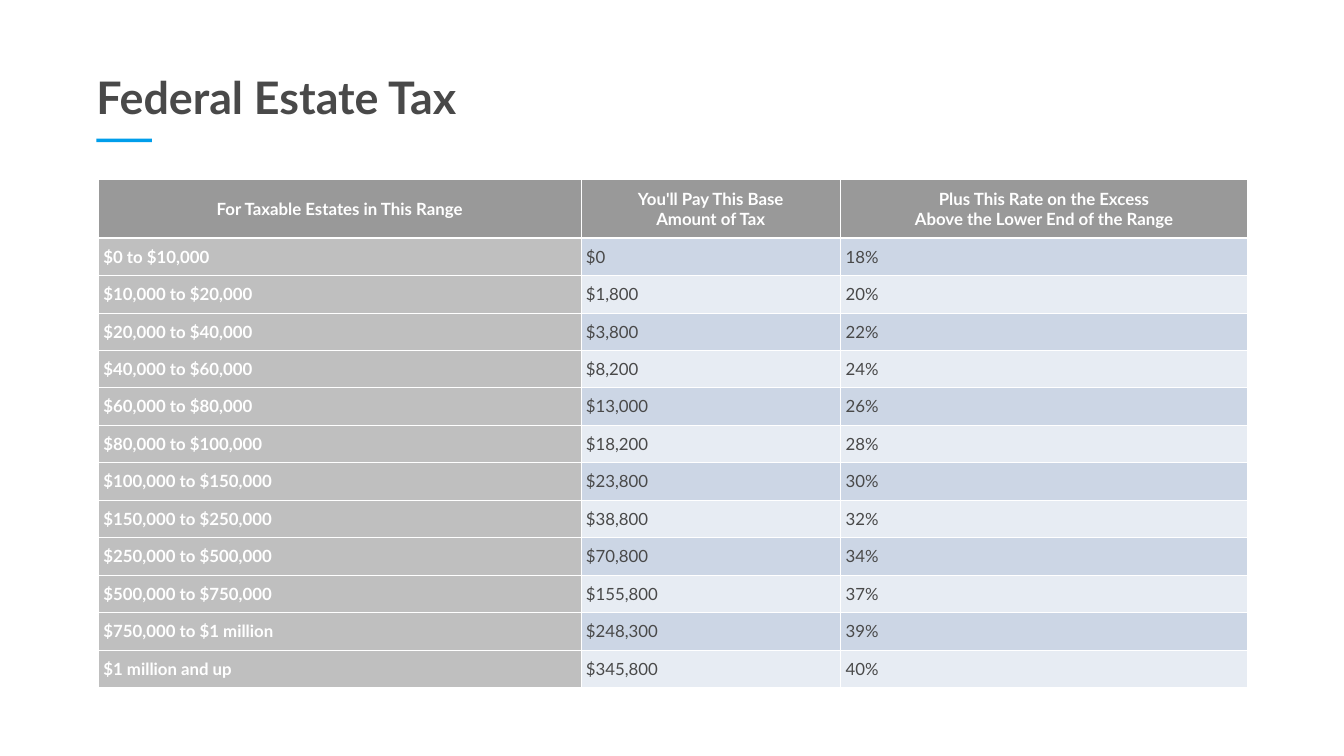
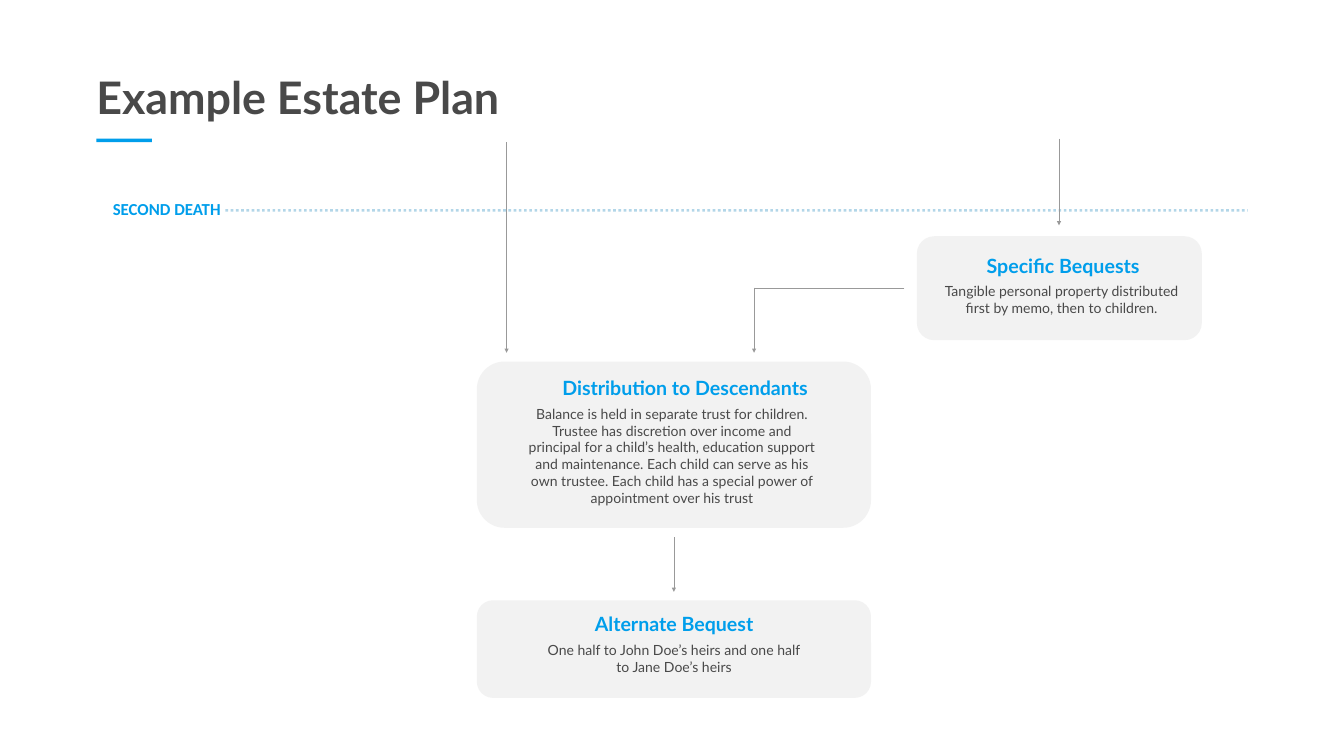
from typing import NamedTuple, Optional

from lxml.etree import SubElement
from pptx import Presentation
from pptx.dml.color import RGBColor
from pptx.enum.dml import MSO_LINE_DASH_STYLE as Dash
from pptx.enum.shapes import MSO_CONNECTOR as Link, MSO_SHAPE as Form
from pptx.enum.text import MSO_ANCHOR as Anchor, MSO_AUTO_SIZE as Fit, PP_ALIGN as Align
from pptx.oxml.ns import qn
from pptx.util import Pt

# Colours and fonts
INK = RGBColor(0x49, 0x49, 0x49)
BLUE = RGBColor(0x00, 0x9E, 0xEB)
NAVY = RGBColor(0x01, 0x78, 0xB6)
WHITE = RGBColor(0xFF, 0xFF, 0xFF)
GREY = RGBColor(0x99, 0x99, 0x99)
SILVER = RGBColor(0xBF, 0xBF, 0xBF)
PALE = RGBColor(0xF2, 0xF2, 0xF2)
BANDS = (RGBColor(0xCC, 0xD6, 0xE5), RGBColor(0xE7, 0xEC, 0xF3))
LATO = "Lato"


class Box(NamedTuple):
    left: float
    top: float
    width: float
    height: float

    def pts(self) -> list:
        return [Pt(n) for n in self]


class Style(NamedTuple):
    size: float
    color: RGBColor
    bold: bool = False
    font: str = LATO


class Card(NamedTuple):
    panel: Box
    head: str
    head_box: Box
    body: str
    body_box: Box


class Line(NamedTuple):
    x1: float
    y1: float
    x2: float
    y2: float
    color: RGBColor = GREY
    width: float = 0.5
    arrow: bool = True
    dash: Optional[Dash] = None
    alpha: int = 100


TITLE = Style(64, INK, True)
LABEL = Style(24, BLUE, True, "Calibri")
HEAD = Style(28, BLUE, True)
BODY = Style(20, INK)
STRONG = Style(24, WHITE, True)
PLAIN = Style(24, INK)

# Tax table
HEADS = (
    "For Taxable Estates in This Range",
    "You'll Pay This Base\nAmount of Tax",
    "Plus This Rate on the Excess\nAbove the Lower End of the Range",
)
RATES = (
    ("$0 to $10,000", "$0", "18%"),
    ("$10,000 to $20,000", "$1,800", "20%"),
    ("$20,000 to $40,000", "$3,800", "22%"),
    ("$40,000 to $60,000", "$8,200", "24%"),
    ("$60,000 to $80,000", "$13,000", "26%"),
    ("$80,000 to $100,000", "$18,200", "28%"),
    ("$100,000 to $150,000", "$23,800", "30%"),
    ("$150,000 to $250,000", "$38,800", "32%"),
    ("$250,000 to $500,000", "$70,800", "34%"),
    ("$500,000 to $750,000", "$155,800", "37%"),
    ("$750,000 to $1 million", "$248,300", "39%"),
    ("$1 million and up", "$345,800", "40%"),
)
COLS = (689, 371, 581)
HEAD_ROW, ROW = 83.5, 53.5

# Estate plan
CARDS = (
    Card(Box(1309.5, 337.5, 407, 148.5),
         "Specific Bequests", Box(1356, 359, 324.5, 41),
         "Tangible personal property distributed first by memo, then to children.",
         Box(1327, 400.5, 378.5, 55.5)),
    Card(Box(681, 516.5, 563, 237.5),
         "Distribution to Descendants", Box(777, 533.5, 402.5, 41),
         "Balance is held in separate trust for children. Trustee has discretion over "
         "income and principal for a child’s health, education support and maintenance. "
         "Each child can serve as his own trustee. Each child has a special power of "
         "appointment over his trust",
         Box(743, 575.5, 433.5, 152.5)),
    Card(Box(681, 857.5, 563, 139.5),
         "Alternate Bequest", Box(777, 871, 371.5, 41),
         "One half to John Doe’s heirs and one half\nto Jane Doe’s heirs",
         Box(746, 913, 433.5, 55.5)),
)
LINES = (
    Line(322, 300.5, 1782, 300.5, NAVY, 3.75, False, Dash.ROUND_DOT, 30),
    Line(1512.5, 198, 1512.5, 322),
    Line(723.5, 203, 723.5, 504),
    Line(1291.5, 411, 1077, 411, arrow=False),
    Line(1077, 411, 1077, 504),
    Line(962.5, 767.5, 962.5, 845.5),
)


def write(para, text: str, style: Style, align: Align = Align.LEFT) -> None:
    para.alignment = align
    for i, part in enumerate(text.split("\n")):
        if i:
            para.add_line_break()
        run = para.add_run()
        run.text = part
        font = run.font
        font.size, font.bold, font.name = Pt(style.size), style.bold, style.font
        font.color.rgb = style.color


def add_text(slide, box: Box, text: str, style: Style, align: Align = Align.LEFT) -> None:
    frame = slide.shapes.add_textbox(*box.pts()).text_frame
    frame.word_wrap = True
    frame.auto_size = Fit.SHAPE_TO_FIT_TEXT
    write(frame.paragraphs[0], text, style, align)


def add_form(slide, form: Form, box: Box, color: RGBColor) -> None:
    shape = slide.shapes.add_shape(form, *box.pts())
    shape.shadow.inherit = False
    shape.fill.solid()
    shape.fill.fore_color.rgb = color
    shape.line.fill.background()


def add_line(slide, line: Line) -> None:
    ends = [Pt(n) for n in line[:4]]
    link = slide.shapes.add_connector(Link.STRAIGHT, *ends)
    link.line.width = Pt(line.width)
    link.line.color.rgb = line.color
    if line.dash:
        link.line.dash_style = line.dash
    props = link.element.spPr
    stroke = props.find(qn("a:ln"))
    if line.alpha < 100:
        tone = stroke.find(".//" + qn("a:srgbClr"))
        SubElement(tone, qn("a:alpha"), val=str(line.alpha * 1000))
    if line.arrow:
        SubElement(stroke, qn("a:tailEnd"), type="triangle")
    SubElement(props, qn("a:effectLst"))


def add_card(slide, card: Card) -> None:
    add_form(slide, Form.ROUNDED_RECTANGLE, card.panel, PALE)
    add_text(slide, card.head_box, card.head, HEAD, Align.CENTER)
    add_text(slide, card.body_box, card.body, BODY, Align.CENTER)


def add_edge(cell, side: str, width: float) -> None:
    props = cell._tc.get_or_add_tcPr()
    edge = SubElement(props, qn("a:ln" + side), w=str(Pt(width)))
    fill = SubElement(edge, qn("a:solidFill"))
    SubElement(fill, qn("a:srgbClr"), val=str(WHITE))


def fill_cell(cell, row: int, col: int, text: str) -> None:
    for side in "LRTB":
        thick = (row, side) in ((0, "B"), (1, "T"))
        add_edge(cell, side, 3 if thick else 1)
    if row == 0:
        color = GREY
    else:
        color = BANDS[(row - 1) % 2] if col else SILVER
    cell.fill.solid()
    cell.fill.fore_color.rgb = color
    cell.vertical_anchor = Anchor.MIDDLE
    cell.margin_left = cell.margin_right = cell.margin_top = cell.margin_bottom = Pt(7.2)
    para = cell.text_frame.paragraphs[0]
    para.space_after = Pt(9)
    write(para, text, PLAIN if row and col else STRONG,
          Align.LEFT if row else Align.CENTER)


def add_rates(slide) -> None:
    rows = (HEADS,) + RATES
    box = Box(140.5, 256.5, sum(COLS), HEAD_ROW + ROW * len(RATES))
    table = slide.shapes.add_table(len(rows), len(COLS), *box.pts()).table
    table.horz_banding = False
    for col, width in enumerate(COLS):
        table.columns[col].width = Pt(width)
    for row, texts in enumerate(rows):
        table.rows[row].height = Pt(ROW if row else HEAD_ROW)
        for col, text in enumerate(texts):
            fill_cell(table.cell(row, col), row, col, text)


def new_slide(deck, text: str, width: float):
    slide = deck.slides.add_slide(deck.slide_layouts[5])
    # Title and its accent bar
    title = slide.shapes.title
    title.left, title.top, title.width, title.height = Box(137.5, 98.5, width, 78).pts()
    frame = title.text_frame
    frame.margin_left = frame.margin_right = frame.margin_top = frame.margin_bottom = 0
    frame.vertical_anchor = Anchor.MIDDLE
    frame.word_wrap = False
    frame.auto_size = Fit.SHAPE_TO_FIT_TEXT
    write(frame.paragraphs[0], text, TITLE)
    add_form(slide, Form.RECTANGLE, Box(137.5, 198, 79.5, 5), BLUE)
    return slide


def main() -> None:
    deck = Presentation()
    deck.slide_width, deck.slide_height = Pt(1919.5), Pt(1080)

    # Slide 1: tax rates
    add_rates(new_slide(deck, "Federal Estate Tax", 525))

    # Slide 2: flow of the estate
    plan = new_slide(deck, "Example Estate Plan", 586)
    add_text(plan, Box(154, 281, 389.5, 36), "SECOND DEATH", LABEL)
    for card in CARDS:
        add_card(plan, card)
    for line in LINES:
        add_line(plan, line)

    deck.save("out.pptx")


if __name__ == "__main__":
    main()
